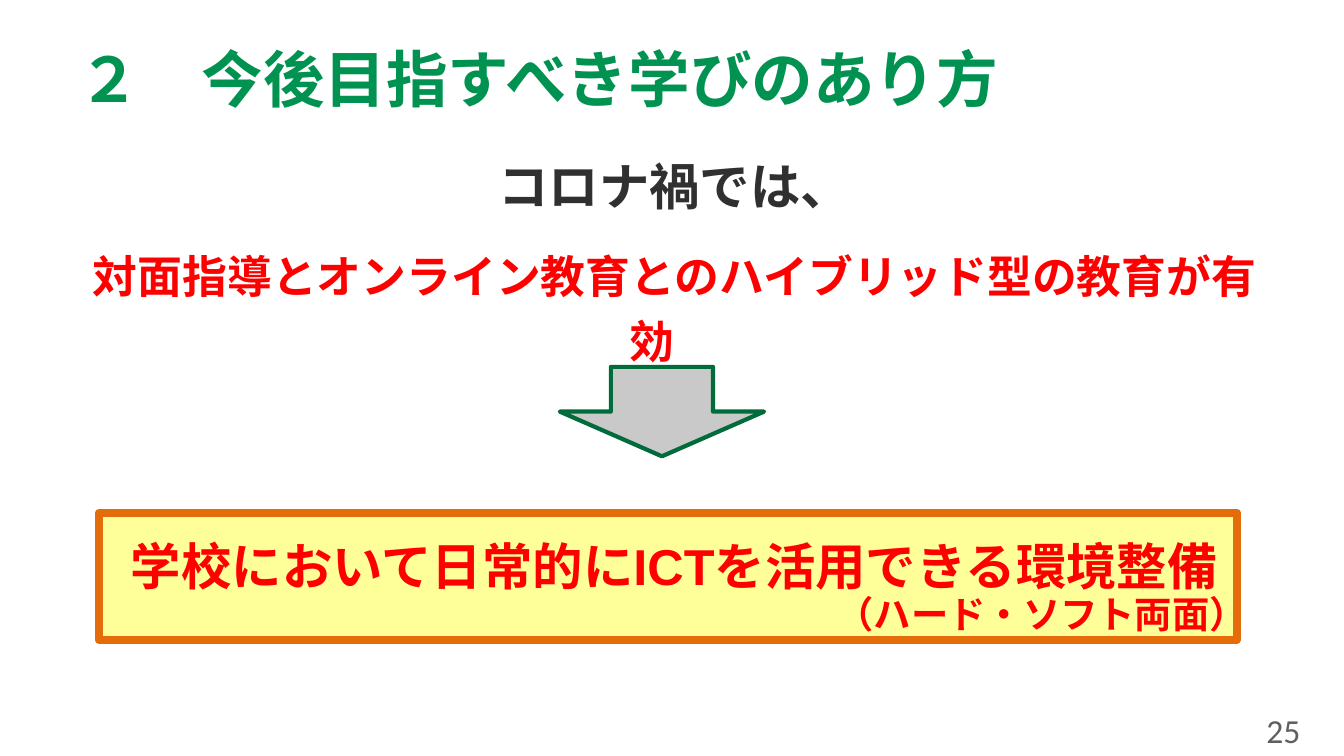
from pptx import Presentation
from pptx.dml.color import RGBColor
from pptx.enum.shapes import MSO_SHAPE
from pptx.enum.text import MSO_ANCHOR, PP_ALIGN
from pptx.util import Pt


def color(hex_value):
    return RGBColor.from_string(hex_value)


def apply(target, values):
    for name, value in values.items():
        setattr(target, name, value)


class SlideBuilder:
    green = "009250"
    dark_green = "006C3B"
    red = "FF0000"
    charcoal = "303030"
    gray = "5F5F5F"
    silver = "C9C9C9"
    yellow = "FFFF99"
    orange = "E46C0A"

    def __init__(self, presentation):
        self.slide = presentation.slides.add_slide(presentation.slide_layouts[6])

    def add_shape(self, kind, bounds, fill, line, line_width):
        shape = self.slide.shapes.add_shape(kind, *map(Pt, bounds))
        shape.shadow.inherit = False
        shape.fill.solid()
        shape.fill.fore_color.rgb = color(fill)
        shape.line.color.rgb = color(line)
        shape.line.width = Pt(line_width)

    def add_text(self, bounds, lines, font="Arial", bold=True,
                 anchor=MSO_ANCHOR.MIDDLE, alignment=PP_ALIGN.LEFT, spacing=1.0):
        frame = self.slide.shapes.add_textbox(*map(Pt, bounds)).text_frame
        apply(frame, {"word_wrap": True, "vertical_anchor": anchor})
        for index, (text, size, text_color) in enumerate(lines):
            paragraph = frame.add_paragraph() if index else frame.paragraphs[0]
            apply(paragraph, {"alignment": alignment, "line_spacing": spacing})
            if index:
                paragraph.space_before = Pt(24)
            run = paragraph.add_run()
            run.text = text
            apply(run.font, {"name": font, "size": Pt(size), "bold": bold})
            run.font.color.rgb = color(text_color)


def main():
    presentation = Presentation()
    apply(presentation, {"slide_width": Pt(1440), "slide_height": Pt(810)})
    builder = SlideBuilder(presentation)
    centered = {"alignment": PP_ALIGN.CENTER, "spacing": 1.2}

    builder.add_shape(MSO_SHAPE.RECTANGLE, (105.8, 549.4, 1219.7, 136),
                      builder.yellow, builder.orange, 8.5)
    builder.add_text((77, 45.4, 1264.3, 85),
                     [("２　今後目指すべき学びのあり方", 66, builder.green)], spacing=0.9)
    builder.add_text((46, 180, 1353.6, 186.5), [
        ("コロナ禍では、", 54, builder.charcoal),
        ("対面指導とオンライン教育とのハイブリッド型の教育が有効　", 48, builder.red),
    ], **centered)
    builder.add_text((30.2, 541.4, 1384.6, 115.2),
                     [("学校において日常的にICTを活用できる環境整備", 54, builder.red)], **centered)
    builder.add_shape(MSO_SHAPE.DOWN_ARROW, (599.8, 393.1, 218.9, 95.8),
                      builder.silver, builder.dark_green, 4.5)
    builder.add_text((1342, 757.4, 58.3, 43.2), [("25", 36, builder.gray)],
                     font="Calibri", bold=False, anchor=MSO_ANCHOR.TOP,
                     alignment=PP_ALIGN.RIGHT)
    builder.add_text((889.2, 630, 475.9, 55.4),
                     [("（ハード・ソフト両面）", 40, builder.red)],
                     font="Calibri", anchor=MSO_ANCHOR.TOP)
    presentation.save("out.pptx")


if __name__ == "__main__":
    main()
